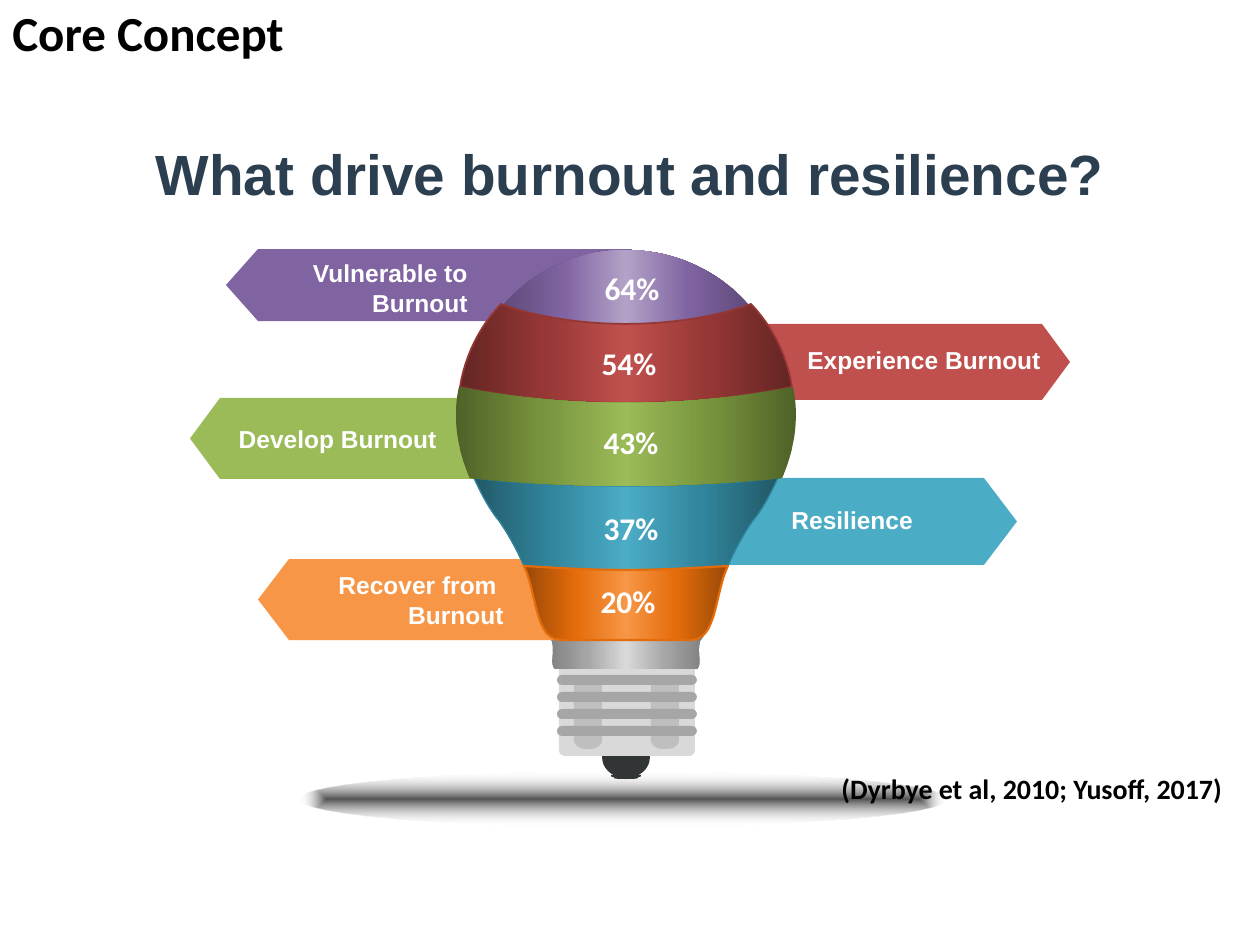
from lxml import etree
from pptx import Presentation
from pptx.dml.color import RGBColor
from pptx.enum.shapes import MSO_SHAPE
from pptx.enum.text import MSO_ANCHOR, MSO_AUTO_SIZE, PP_ALIGN
from pptx.oxml.ns import qn
from pptx.util import Pt

OVAL, ROUND = MSO_SHAPE.OVAL, MSO_SHAPE.ROUNDED_RECTANGLE
LEFT, MID, RIGHT = PP_ALIGN.LEFT, PP_ALIGN.CENTER, PP_ALIGN.RIGHT
GROW, FIXED = MSO_AUTO_SIZE.SHAPE_TO_FIT_TEXT, MSO_AUTO_SIZE.NONE
CENTER = MSO_ANCHOR.MIDDLE
SCALE = 914400 / 126
STEPS = 12
AXIS = 626

HEX = {
    "white": "FFFFFF", "black": "000000", "navy": "2C3F50", "shade": "0D0D0D",
    "tip": "313535", "base": "D9D9D9", "post": "BFBFBF", "ring": "A6A6A6",
    "purple": "8064A2", "red": "C0504D", "green": "9BBB59",
    "teal": "4BACC6", "orange": "F79646",
}
# Each ramp runs edge, middle, centre and is mirrored.
RAMPS = {
    "purple": ("604A7B", "8064A2", "B3A2C7"),
    "red": ("632523", "953735", "C0504D"),
    "green": ("4F6228", "77933C", "9BBB59"),
    "teal": ("215968", "31859C", "4BACC6"),
    "orange": ("984807", "E46C0A", "F79646"),
    "grey": ("808080", "A6A6A6", "D9D9D9"),
}

# Right halves, as offsets from the axis: a start, then cubic triples.
FOOT = [(0, 775), (5, 775), (10, 775), (15, 775), (15, 777), (14, 777),
        (12, 777), (14, 779), (6, 779), (0, 779)]
COLLAR = [(0, 640), (14, 640), (60, 639), (74, 635), (79, 635), (79, 635),
          (75, 640), (75, 640), (73, 641), (73, 650), (73, 659), (75, 665),
          (71, 669), (47, 669), (24, 669), (0, 669)]
POST = [(0, 680), (9, 680), (14, 681), (14, 683), (14, 700), (14, 725),
        (14, 742), (10, 749), (5, 749), (0, 749)]
BANDS = [
    ("purple", 0, [(0, 250), (49, 250), (93, 271), (123, 305), (92, 317),
                   (48, 324), (0, 324)]),
    ("teal", 0.75, [(0, 486), (52, 486), (105, 484), (152, 478), (146, 491),
                    (139, 505), (130, 517), (123, 525), (110, 547),
                    (102, 566), (69, 568), (35, 570), (0, 570)]),
    ("red", 1, [(0, 324), (48, 324), (93, 316), (125, 304), (146, 326),
                (161, 355), (166, 387), (117, 397), (60, 403), (0, 403)]),
    ("green", 0, [(0, 403), (60, 403), (117, 397), (167, 387), (169, 396),
                  (170, 405), (170, 415), (170, 437), (165, 457), (156, 478),
                  (107, 483), (55, 486), (0, 486)]),
    ("orange", 1.25, [(0, 570), (35, 570), (69, 568), (102, 566), (101, 568),
                      (100, 571), (99, 573), (89, 601), (89, 640), (65, 640),
                      (43, 640), (22, 640), (0, 640)]),
]
# Hue, base x, shoulder x, tip x, top, bottom.
TAGS = [
    ("purple", 632, 258, 226, 249, 321),
    ("red", 687, 1042, 1070, 324, 400),
    ("green", 534, 220, 190, 398, 479),
    ("teal", 703, 984, 1017, 478, 565),
    ("orange", 556, 289, 258, 559, 640),
]
LABELS = [
    ("Experience Burnout", (795, 339, 275, 43), LEFT),
    ("Resilience", (779, 499, 219, 43), LEFT),
    ("Recover from \nBurnout", (258, 564, 258, 72), RIGHT),
    ("Develop Burnout", (189, 418, 260, 43), RIGHT),
    ("Vulnerable to Burnout", (220, 252, 260, 72), RIGHT),
]
RATES = [("64%", 576, 263), ("54%", 573, 338), ("43%", 575, 417),
         ("37%", 575, 503), ("20%", 572, 576)]


def px(*nums):
    """Turn px lengths into EMU."""
    return [round(n * SCALE) for n in nums]


def tint(name):
    """Look up a named colour."""
    return RGBColor.from_string(HEX[name])


def plain(shape, hue=None):
    """Strip the shadow and line, and set a solid fill if a hue is given."""
    shape.shadow.inherit = False
    shape.line.fill.background()
    if hue:
        shape.fill.solid()
        shape.fill.fore_color.rgb = tint(hue)
    return shape


def blend(shape, stops, glow=False):
    """Fill with (percent, hex, opacity) stops, across or from the middle."""
    shape.fill.gradient()
    grad = shape._element.spPr.find(qn("a:gradFill"))
    for child in list(grad):
        grad.remove(child)
    row = etree.SubElement(grad, qn("a:gsLst"))
    for at, code, alpha in stops:
        stop = etree.SubElement(row, qn("a:gs"), pos=str(at * 1000))
        color = etree.SubElement(stop, qn("a:srgbClr"), val=code)
        if alpha < 100:
            etree.SubElement(color, qn("a:alpha"), val=str(alpha * 1000))
    if glow:
        way = etree.SubElement(grad, qn("a:path"), path="shape")
        sides = dict.fromkeys("ltrb", "50000")
        etree.SubElement(way, qn("a:fillToRect"), **sides)
    else:
        etree.SubElement(grad, qn("a:lin"), ang="0", scaled="0")


def ramp(shape, hue):
    """Fill with a mirrored side to side ramp."""
    edge, mid, core = RAMPS[hue]
    codes = (edge, mid, core, mid, edge)
    blend(shape, [(25 * i, code, 100) for i, code in enumerate(codes)])


def curve(knots):
    """Sample a chain of cubic curves into points."""
    dots = [knots[0]]
    for i in range(0, len(knots) - 1, 3):
        quad = knots[i:i + 4]
        for step in range(1, STEPS + 1):
            t = step / STEPS
            u = 1 - t
            mix = (u ** 3, 3 * u * u * t, 3 * u * t * t, t ** 3)
            dots.append(tuple(sum(m * p[k] for m, p in zip(mix, quad))
                              for k in (0, 1)))
    return dots


def trace(slide, dots, hue=None):
    """Draw a closed outline through px points."""
    first, *rest = [px(*dot) for dot in dots]
    pen = slide.shapes.build_freeform(*first, scale=1.0)
    pen.add_line_segments(rest, close=True)
    return plain(pen.convert_to_shape(), hue)


def mirror(slide, half, hue=None, axis=AXIS):
    """Draw a right half and its reflection as one outline."""
    side = curve(half)
    dots = [(axis + x, y) for x, y in side]
    dots += [(axis - x, y) for x, y in side[-2:0:-1]]
    return trace(slide, dots, hue)


def block(slide, kind, area, hue=None, bend=None):
    """Add a preset shape, with its corner bend if given."""
    shape = slide.shapes.add_shape(kind, *px(*area))
    if bend is not None:
        shape.adjustments[0] = bend
    return plain(shape, hue)


def write(box, text, size=14, font="Arial", hue="white", align=LEFT,
          wrap=True, fit=GROW):
    """Put bold text in a box with the given format."""
    frame = box.text_frame
    frame.text = text
    frame.word_wrap = wrap
    frame.auto_size = fit
    for para in frame.paragraphs:
        para.alignment = align
        para.font.size = Pt(size)
        para.font.name = font
        para.font.bold = True
        para.font.color.rgb = tint(hue)


def label(slide, text, area, **style):
    """Add a text box."""
    write(slide.shapes.add_textbox(*px(*area)), text, **style)


def head(slide):
    """Place and format the title."""
    title = slide.shapes.title
    title.left, title.top, title.width, title.height = px(63, 136, 1134, 73)
    write(title, "What drive burnout and resilience?", size=32.4,
          hue="navy", align=MID, fit=FIXED)
    title.text_frame.vertical_anchor = CENTER


def socket(slide):
    """Draw the screw base of the bulb."""
    mirror(slide, FOOT, "tip")
    block(slide, OVAL, (602, 736, 48, 42), "tip")
    block(slide, ROUND, (559, 658, 136, 98), "base", 0.06)
    ramp(mirror(slide, COLLAR), "grey")
    for axis in (588, 665):
        mirror(slide, POST, "post", axis)
    for i in range(4):
        block(slide, ROUND, (557, 675 + 17 * i, 140, 10), "ring", 0.5)


def bulb(slide):
    """Draw the tags and the glass bands over them."""
    for hue, base, neck, tip, top, low in TAGS:
        trace(slide, [(base, top), (neck, top), (tip, (top + low) / 2),
                      (neck, low), (base, low)], hue)
    for hue, width, half in BANDS:
        band = mirror(slide, half)
        ramp(band, hue)
        if width:
            band.line.color.rgb = RGBColor.from_string(RAMPS[hue][1])
            band.line.width = Pt(width)


def main():
    """Build the slide and save it."""
    deck = Presentation()
    deck.slide_width, deck.slide_height = px(1260, 945)
    slide = deck.slides.add_slide(deck.slide_layouts[5])
    head(slide)
    floor = block(slide, OVAL, (300, 772, 646, 54))
    blend(floor, [(0, HEX["shade"], 71), (100, HEX["white"], 0)], glow=True)
    socket(slide)
    bulb(slide)
    for text, area, align in LABELS:
        label(slide, text, area, align=align)
    for text, left, top in RATES:
        label(slide, text, (left, top, 112, 50), size=18, font="Calibri",
              align=MID)
    label(slide, "(Dyrbye et al, 2010; Yusoff, 2017)", (829, 765, 421, 47),
          size=16, font="Calibri", hue="black", wrap=False)
    label(slide, "Core Concept", (0, -4, 504, 72), size=28, font="Calibri",
          hue="black")
    deck.save("out.pptx")


if __name__ == "__main__":
    main()
